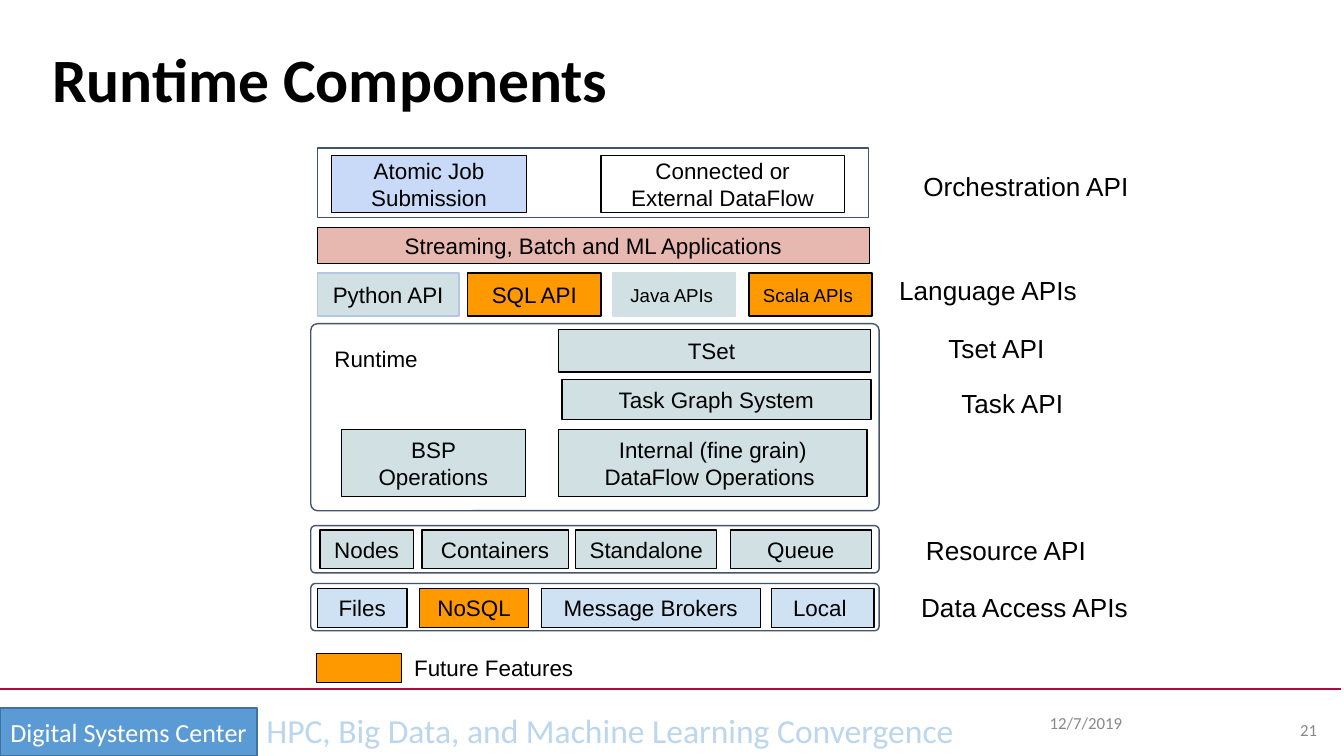
import pptx
import pptx.util
import pptx.dml.color
import pptx.enum.shapes
import pptx.enum.text
import pptx.oxml.ns
import lxml.etree

Pt = pptx.util.Pt
KIND = pptx.enum.shapes.MSO_SHAPE
ALIGN = {"l": pptx.enum.text.PP_ALIGN.LEFT,
         "c": pptx.enum.text.PP_ALIGN.CENTER,
         "r": pptx.enum.text.PP_ALIGN.RIGHT}
ANCHOR = {"t": pptx.enum.text.MSO_ANCHOR.TOP,
          "m": pptx.enum.text.MSO_ANCHOR.MIDDLE}
TEAL, ORANGE, BLUE = "D0E0E3", "FF9900", "CFE2F3"
BLACK, SLATE, GREY = "000000", "44546A", "888888"


def color(code):
    return pptx.dml.color.RGBColor.from_string(code)


def write(shape, text, size=12, font="Arial", ink=BLACK, bold=False,
          align="c", anchor="m", inset=(7.2, 7.2), space=None):
    frame = shape.text_frame
    frame.word_wrap = True
    frame.vertical_anchor = ANCHOR[anchor]
    frame.margin_left = frame.margin_right = Pt(inset[0])
    frame.margin_top = frame.margin_bottom = Pt(inset[1])
    para = frame.paragraphs[0]
    para.alignment = ALIGN[align]
    if space:
        para.line_spacing = space
    run = para.add_run()
    run.text = text
    run.font.size = Pt(size)
    run.font.name = font
    run.font.bold = bold
    run.font.color.rgb = color(ink)


def label(slide, box, text, **style):
    write(slide.shapes.add_textbox(*map(Pt, box)), text, **style)


def block(slide, box, text="", fill=None, line=BLACK, weight=0.75,
          kind=KIND.RECTANGLE, **style):
    shape = slide.shapes.add_shape(kind, *map(Pt, box))
    shape.shadow.inherit = False
    if fill:
        shape.fill.solid()
        shape.fill.fore_color.rgb = color(fill)
    else:
        shape.fill.background()
    shape.line.color.rgb = color(line)
    shape.line.width = Pt(weight)
    if text:
        write(shape, text, **style)
    return shape


def panel(slide, top, height, round_by):
    shape = block(slide, (166.5, top, 304.5, height), line=SLATE,
                  kind=KIND.ROUNDED_RECTANGLE)
    shape.adjustments[0] = round_by


def row(slide, top, height, items):
    for left, width, text, fill, *style in items:
        block(slide, (left, top, width, height), text, fill,
              **(style[0] if style else {}))


def rule(slide, left, right, y, ink):
    line = slide.shapes.add_connector(
        pptx.enum.shapes.MSO_CONNECTOR.STRAIGHT,
        Pt(left), Pt(y), Pt(right), Pt(y))
    line.line.color.rgb = color(ink)
    line.line.width = Pt(0.75)
    lxml.etree.SubElement(line._element.spPr,
                          pptx.oxml.ns.qn("a:effectLst"))


def footer(slide):
    block(slide, (0, 379.2, 137.8, 25.8), "Digital Systems Center", "5B9BD5",
          "42719B", 1, size=14, font="Calibri", ink="FFFFFF", inset=(5, 3))
    rule(slide, -2, 718.6, 369.2, "B30838")
    label(slide, (137.8, 377.3, 384.5, 27.4),
          "HPC, Big Data, and Machine Learning Convergence", size=18,
          font="Calibri", ink="BBD6EE", align="l", anchor="t", inset=(5, 3))
    label(slide, (557.3, 376.6, 76.3, 21.6), "12/7/2019", size=9,
          font="Calibri", ink=GREY, align="l", inset=(5, 3))
    label(slide, (667.4, 381.6, 43.2, 18.7), "21", size=9,
          font="Calibri", ink=GREY, align="r", inset=(5, 5))


def stack(slide):
    # Orchestration and applications
    block(slide, (170, 79.2, 295.2, 37.4), fill="FFFFFF", line=SLATE)
    row(slide, 83.4, 30.6, [(177.6, 104.6, "Atomic Job Submission", "C9DAF8"),
                            (322, 130.4, "Connected or External DataFlow",
                             None)])
    row(slide, 121.9, 19.4,
        [(170, 296, "Streaming, Batch and ML Applications", "E6B8AF")])

    # Languages
    row(slide, 146.3, 23, [
        (170, 76, "Python API", TEAL, {"line": "B4C7E7"}),
        (250.6, 71.3, "SQL API", ORANGE),
        (328.3, 65.8, "Java APIs ", TEAL, {"line": TEAL, "size": 10}),
        (401.3, 65.8, "Scala APIs ", ORANGE, {"size": 10})])

    # Runtime
    panel(slide, 173.4, 100.2, 0.036)
    label(slide, (172.1, 177.8, 126.7, 15.1), "Runtime",
          align="l", anchor="t")
    row(slide, 176.4, 23, [(299.3, 167, "TSet ", TEAL)])
    row(slide, 203.5, 21.2, [(301, 165.6, "Task Graph System", TEAL)])
    row(slide, 230.2, 36, [
        (182.9, 98.6, "BSP Operations", TEAL),
        (299.3, 165.2, "Internal (fine grain) DataFlow Operations ", TEAL)])

    # Resources
    panel(slide, 281.6, 25.3, 0.096)
    row(slide, 283.9, 20.6, [(171.4, 50, "Nodes", TEAL),
                             (226, 78.5, "Containers", TEAL),
                             (308.4, 75.6, "Standalone", TEAL),
                             (391.2, 75.6, "Queue", TEAL)])

    # Data access
    panel(slide, 312.6, 25.3, 0.096)
    row(slide, 315.2, 20.9, [(170, 48.2, "Files", BLUE),
                             (224.8, 58.5, "NoSQL", ORANGE),
                             (290, 117.4, "Message Brokers", BLUE),
                             (413.4, 54.9, "Local ", BLUE)])

    # Legend
    block(slide, (169.7, 350, 45.5, 15.8), fill=ORANGE)
    label(slide, (214.8, 343.3, 126.7, 15.1), "Future Features",
          align="l", anchor="t")


def names(slide):
    for left, top, width, height, text in [
            (469.4, 84.6, 160.6, 30.2, "Orchestration API"),
            (458, 141.4, 142.6, 28, "Language APIs"),
            (462.5, 172.4, 142.6, 28, "Tset API"),
            (471, 201.9, 142.6, 28, "Task API"),
            (486.7, 273.8, 104.4, 41.8, "Resource API")]:
        label(slide, (left, top, width, height), text, size=14)
    label(slide, (486.4, 309.8, 126.7, 15.1), "Data Access APIs",
          size=14, align="l", anchor="t")


def main():
    deck = pptx.Presentation()
    deck.slide_width, deck.slide_height = Pt(720), Pt(405)
    slide = deck.slides.add_slide(deck.slide_layouts[6])
    footer(slide)
    label(slide, (20.9, 19.4, 671, 45.4), "Runtime Components", size=33,
          font="Calibri", bold=True, align="l", anchor="t", space=0.9)
    stack(slide)
    names(slide)
    deck.save("out.pptx")


if __name__ == "__main__":
    main()
